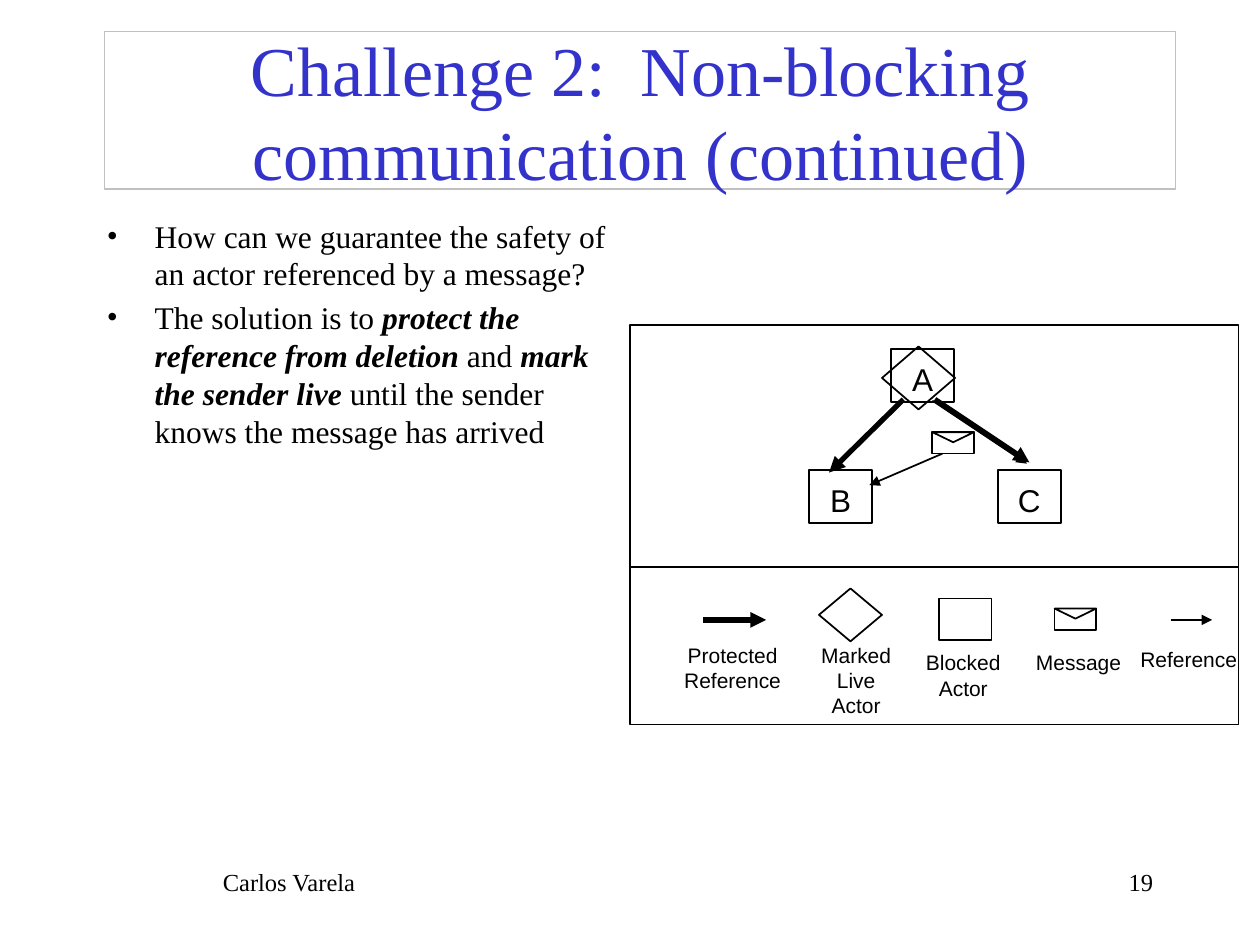
"""Build the slide on non-blocking communication between actors."""
from lxml import etree
from pptx import Presentation
from pptx.dml.color import RGBColor
from pptx.enum.shapes import MSO_CONNECTOR, MSO_SHAPE
from pptx.enum.text import MSO_ANCHOR, MSO_AUTO_SIZE, PP_ALIGN
from pptx.oxml.ns import qn
from pptx.util import Inches, Pt

RECT = MSO_SHAPE.RECTANGLE
DIAMOND = MSO_SHAPE.DIAMOND
FLAP = MSO_SHAPE.ISOSCELES_TRIANGLE
LINE = MSO_CONNECTOR.STRAIGHT
LEFT, MID, RIGHT = PP_ALIGN.LEFT, PP_ALIGN.CENTER, PP_ALIGN.RIGHT
CENTRE = MSO_ANCHOR.MIDDLE
FIT, FIXED = MSO_AUTO_SIZE.SHAPE_TO_FIT_TEXT, MSO_AUTO_SIZE.NONE
SERIF, SANS = "Times New Roman", "Arial"
COLORS = {"ink": "000000", "title": "3333CC", "edge": "C0C0C0"}


class Board:
    def __init__(self, deck):
        self.slide = deck.slides.add_slide(deck.slide_layouts[5])
        self.shapes = self.slide.shapes

    def color(self, name):
        return RGBColor.from_string(COLORS[name])

    def run(self, para, text, size, font, color="ink", strong=False):
        run = para.add_run()
        run.text = text
        run.font.size = Pt(size)
        run.font.name = font
        run.font.bold = run.font.italic = strong
        run.font.color.rgb = self.color(color)

    def title(self, text, *box):
        item = self.shapes.title
        item.left, item.top, item.width, item.height = map(Inches, box)
        item.line.color.rgb = self.color("edge")
        item.line.width = Pt(0.75)
        frame = item.text_frame
        frame.word_wrap = True
        frame.auto_size = FIXED
        frame.vertical_anchor = CENTRE
        para = frame.paragraphs[0]
        para.alignment = MID
        self.run(para, text, 40, SERIF, "title")

    def text(self, lines, *box, size=14, font=SERIF, align=LEFT, wrap=True):
        frame = self.shapes.add_textbox(*map(Inches, box)).text_frame
        frame.word_wrap = wrap
        frame.auto_size = FIXED if wrap else FIT
        for i, line in enumerate(lines):
            para = frame.add_paragraph() if i else frame.paragraphs[0]
            para.alignment = align
            self.run(para, line, size, font)

    def label(self, lines, *box, size=12, align=MID):
        self.text(lines, *box, size=size, font=SANS, align=align, wrap=False)

    def bullets(self, items, *box):
        frame = self.shapes.add_textbox(*map(Inches, box)).text_frame
        frame.word_wrap = True
        for i, parts in enumerate(items):
            para = frame.add_paragraph() if i else frame.paragraphs[0]
            para.space_before = Pt(3.6)
            for text, strong in parts:
                self.run(para, text, 18, SERIF, strong=strong)
            props = para._p.get_or_add_pPr()
            props.set("marL", str(Inches(0.38)))
            props.set("indent", str(-Inches(0.38)))
            etree.SubElement(props, qn("a:buFont")).set("typeface", SERIF)
            etree.SubElement(props, qn("a:buChar")).set("char", "•")

    def shape(self, kind, *box, home=None):
        item = (home or self.slide).shapes.add_shape(kind, *map(Inches, box))
        item.shadow.inherit = False
        item.fill.background()
        item.line.color.rgb = self.color("ink")
        item.line.width = Pt(1)
        return item

    def actor(self, name, left, top, wide):
        self.shape(RECT, left, top, 0.5, 0.42)
        self.label([name], left + 0.25 - wide / 2, top + 0.04, wide, 0.4,
                   size=18, align=LEFT)

    def letter(self, left, top):
        group = self.shapes.add_group_shape()
        self.shape(RECT, left, top, 0.33, 0.17, home=group)
        flap = self.shape(FLAP, left, top, 0.33, 0.08, home=group)
        flap.rotation = 180

    def line(self, *ends, width=1, head=True):
        item = self.shapes.add_connector(LINE, *map(Inches, ends))
        item.line.color.rgb = self.color("ink")
        item.line.width = Pt(width)
        if head:
            stroke = item.line._get_or_add_ln()
            etree.SubElement(stroke, qn("a:tailEnd")).set("type", "triangle")
        etree.SubElement(item._element.spPr, qn("a:effectLst"))


def main():
    deck = Presentation()
    deck.slide_width, deck.slide_height = Inches(10), Inches(7.5)
    board = Board(deck)

    board.text(["Carlos Varela"], 1.67, 6.83, 6.67, 0.5)
    board.text(["19"], 7.17, 6.83, 2.08, 0.5, align=RIGHT)
    board.title("Challenge 2:  Non-blocking communication (continued)",
                0.83, 0.25, 8.5, 1.25)
    board.bullets([
        [("How can we guarantee the safety of an actor referenced by "
          "a message?", False)],
        [("The solution is to ", False),
         ("protect the reference from deletion", True),
         (" and ", False),
         ("mark the sender live", True),
         (" until the sender knows the message has arrived", False)],
    ], 0.75, 1.67, 4.17, 5)

    for name, left, top, wide in [("A", 7.07, 2.77, 0.36),
                                  ("C", 7.92, 3.73, 0.38),
                                  ("B", 6.42, 3.73, 0.36)]:
        board.actor(name, left, top, wide)
    board.line(7.4, 3.18, 8.15, 3.68)
    board.letter(7.4, 3.43)
    board.line(7.48, 3.6, 6.9, 3.85)
    board.line(7.42, 3.17, 8.17, 3.67, width=3)
    board.line(7.17, 3.17, 6.58, 3.75, width=3)
    board.shape(DIAMOND, 7, 2.75, 0.58, 0.5)

    board.line(5.58, 4.92, 6.08, 4.92, width=3)
    board.shape(DIAMOND, 6.5, 4.67, 0.5, 0.42)
    board.shape(RECT, 7.45, 4.75, 0.42, 0.33)
    board.letter(8.37, 4.83)
    board.line(9.29, 4.92, 9.62, 4.92)
    for words, *box in [("Protected Reference", 5.33, 5.05, 0.97, 0.5),
                        ("Marked Live Actor", 6.39, 5.05, 0.81, 0.7),
                        ("Blocked Actor", 7.25, 5.11, 0.79, 0.5),
                        ("Message", 8.12, 5.11, 0.88, 0.3),
                        ("Reference", 8.95, 5.08, 0.97, 0.3)]:
        board.label(words.split(), *box)

    board.shape(RECT, 5, 2.58, 4.83, 3.17)
    board.line(5, 4.5, 9.83, 4.5, head=False)
    deck.save("out.pptx")


if __name__ == "__main__":
    main()
